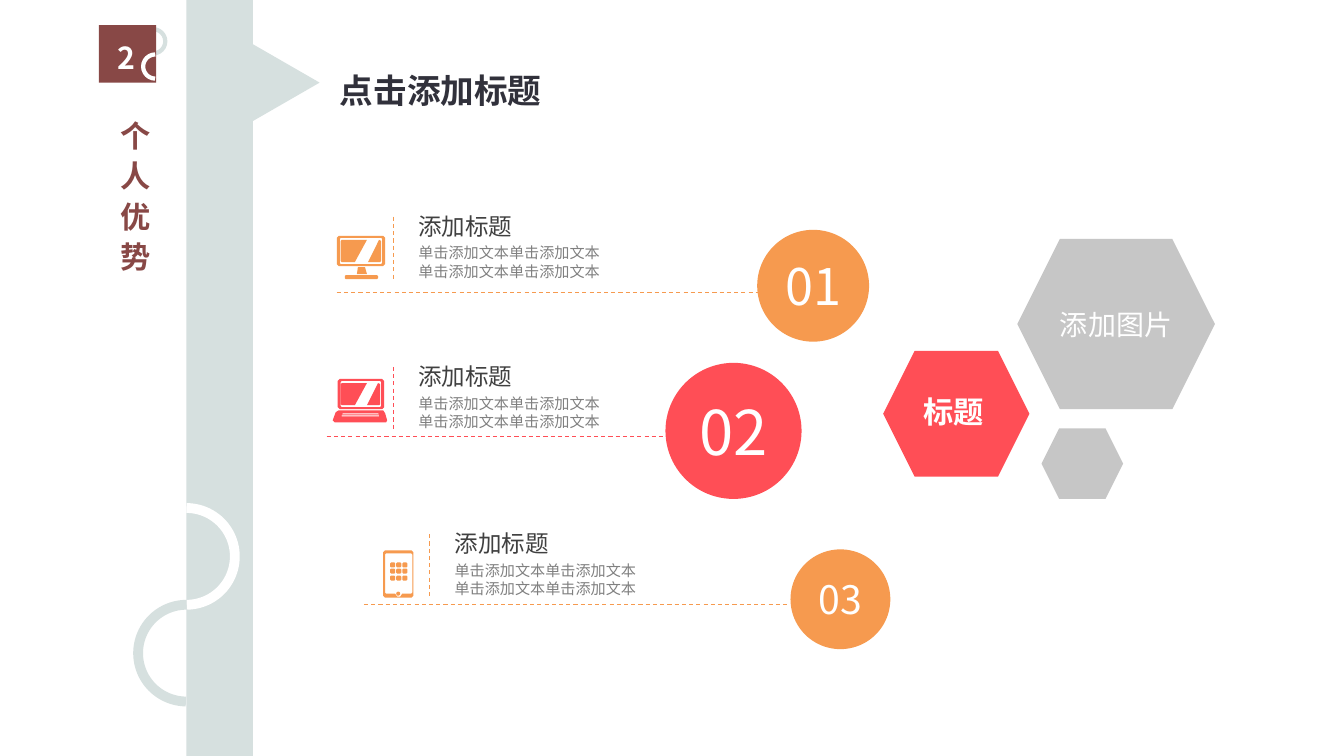
from dataclasses import dataclass

from lxml.etree import SubElement
from pptx import Presentation
from pptx.dml.color import RGBColor
from pptx.enum.dml import MSO_LINE
from pptx.enum.shapes import MSO_CONNECTOR, MSO_SHAPE as SHAPE
from pptx.enum.text import MSO_ANCHOR, MSO_AUTO_SIZE, PP_ALIGN
from pptx.oxml.ns import qn
from pptx.util import Pt

PX = 9144  # EMU in one px, a hundredth of an inch
FONT = "Noto Sans CJK JP"
ORANGE = RGBColor(0xF6, 0x9A, 0x4F)
RED = RGBColor(0xFF, 0x4E, 0x56)
WHITE = RGBColor(0xFF, 0xFF, 0xFF)
SILVER = RGBColor(0xC6, 0xC6, 0xC6)
GREY = RGBColor(0xA6, 0xA6, 0xA6)
HEADING = RGBColor(0x40, 0x40, 0x40)
BODY = RGBColor(0x80, 0x80, 0x80)
INK = RGBColor(0x31, 0x31, 0x3B)
MIST = RGBColor(0xD6, 0xE0, 0xDF)
MAROON = RGBColor(0x88, 0x48, 0x46)

Box = tuple[int, int, int, int]
Contour = list[tuple[int, int]]


@dataclass
class Entry:
    number: str
    number_size: int
    disc: Box
    color: RGBColor
    text_left: int
    text_top: int
    rule: tuple[int, int, int]  # left, right, y


@dataclass
class Arc:
    box: Box
    color: RGBColor
    weight: int
    flipped: bool = False


ENTRIES = [
    Entry("01", 36, (751, 228, 111, 111), ORANGE, 405, 205, (334, 761, 290)),
    Entry("02", 44, (660, 360, 135, 135), RED, 405, 354, (324, 660, 433)),
    Entry("03", 28, (784, 545, 99, 99), ORANGE, 441, 520, (361, 783, 600)),
]
BADGE_RING = Arc((140, 29, 24, 24), MIST, 3)
BADGE_HOOK = Arc((142, 54, 24, 24), WHITE, 3, flipped=True)
BAND_ARCS = [
    Arc((137, 504, 96, 96), WHITE, 7),
    Arc((137, 600, 96, 96), MIST, 7, flipped=True),
]

presentation = Presentation()
presentation.slide_width, presentation.slide_height = 1333 * PX, 750 * PX
slide = presentation.slides.add_slide(presentation.slide_layouts[5])
shapes = slide.shapes


def scaled(box: Box) -> list[int]:
    return [length * PX for length in box]


def paint(shape, color: RGBColor) -> None:
    shape.fill.solid()
    shape.fill.fore_color.rgb = color
    shape.line.fill.background()
    shape.shadow.inherit = False


def write(frame, text: str, size: float, color: RGBColor, bold: bool = False) -> None:
    frame.text = text
    for paragraph in frame.paragraphs:
        for run in paragraph.runs:
            run.font.name = FONT
            run.font.size = Pt(size)
            run.font.bold = bold
            run.font.color.rgb = color
            SubElement(run.font._element, qn("a:ea")).set("typeface", FONT)


def add_filled(kind: SHAPE, box: Box, color: RGBColor, text: str = "", size: float = 18):
    shape = shapes.add_shape(kind, *scaled(box))
    paint(shape, color)
    if text:
        frame = shape.text_frame
        write(frame, text, size, WHITE)
        frame.vertical_anchor = MSO_ANCHOR.MIDDLE
        frame.paragraphs[0].alignment = PP_ALIGN.CENTER
    return shape


def add_text(box: Box, text: str, size: float, color: RGBColor, bold: bool = False):
    frame = shapes.add_textbox(*scaled(box)).text_frame
    write(frame, text, size, color, bold)
    frame.word_wrap = False
    frame.auto_size = MSO_AUTO_SIZE.SHAPE_TO_FIT_TEXT
    return frame


def add_dashes(x1: int, y1: int, x2: int, y2: int, color: RGBColor) -> None:
    line = shapes.add_connector(MSO_CONNECTOR.STRAIGHT, *scaled((x1, y1, x2, y2)))
    line.line.color.rgb = color
    line.line.width = Pt(0.75)
    line.line.dash_style = MSO_LINE.DASH
    SubElement(line._element.spPr, qn("a:effectLst"))


def add_arc(arc: Arc) -> None:
    shape = shapes.add_shape(SHAPE.ARC, *scaled(arc.box))
    shape.adjustments[0], shape.adjustments[1] = 162, 53.59
    shape.fill.background()
    shape.line.color.rgb = arc.color
    shape.line.width = Pt(arc.weight)
    shape.shadow.inherit = False
    if arc.flipped:
        shape._element.spPr.find(qn("a:xfrm")).set("flipH", "1")


def add_outline(color: RGBColor, *contours: Contour) -> None:
    """Draw one freeform; later contours cut holes in the first."""
    builder = shapes.build_freeform(*contours[0][0], scale=PX)
    builder.add_line_segments(contours[0][1:])
    for contour in contours[1:]:
        builder.move_to(*contour[0])
        builder.add_line_segments(contour[1:])
    paint(builder.convert_to_shape(), color)


def soft_box(x: int, y: int, w: int, h: int, cut: int = 1) -> Contour:
    r, b = x + w, y + h
    return [(x + cut, y), (r - cut, y), (r, y + cut), (r, b - cut),
            (r - cut, b), (x + cut, b), (x, b - cut), (x, y + cut)]


def add_screen(x: int, y: int, w: int, inset: int, color: RGBColor) -> None:
    left, right, top, bottom = x + inset, x + w - 4, y + 4, y + 26
    add_outline(color, soft_box(x, y, w, 30, 2), soft_box(x + 3, y + 2, w - 6, 26))
    add_outline(color, [(left + 1, top), (left + 26, top), (left + 14, bottom),
                        (left + 1, bottom), (left, bottom - 1), (left, top + 1)])
    add_outline(color, [(right - 2, top), (right, top + 1), (right, bottom - 1),
                        (right - 1, bottom), (right - 13, bottom)])


# Heading
title = shapes.title
title.left, title.top, title.width, title.height = scaled((327, 44, 224, 65))
write(title.text_frame, "点击添加标题", 24, INK, bold=True)
title.text_frame.word_wrap = False
title.text_frame.auto_size = MSO_AUTO_SIZE.SHAPE_TO_FIT_TEXT
title.text_frame.vertical_anchor = MSO_ANCHOR.TOP
title.text_frame.paragraphs[0].alignment = PP_ALIGN.LEFT
title.text_frame.paragraphs[0].line_spacing = 1.5

# Numbered entries
for entry in ENTRIES:
    x, y = entry.text_left, entry.text_top
    left, right, rule_y = entry.rule
    add_filled(SHAPE.OVAL, entry.disc, entry.color, entry.number, entry.number_size)
    add_dashes(left, rule_y, right, rule_y, entry.color)
    add_dashes(x - 15, y + 10, x - 15, y + 73, entry.color)
    add_text((x, y, 114, 38), "添加标题", 16.8, HEADING)
    add_text((x, y + 32, 201, 46), "\n".join(["单击添加文本单击添加文本"] * 2), 10.8, BODY)

# Monitor icon
add_screen(334, 234, 48, 4, ORANGE)
add_outline(ORANGE, [(355, 265), (362, 265), (364, 272), (354, 272)])
add_outline(ORANGE, soft_box(342, 273, 33, 4))

# Laptop icon
add_screen(335, 376, 46, 3, RED)
add_outline(RED,
            [(336, 407), (380, 407), (382, 410), (384, 417), (383, 419),
             (332, 419), (330, 417), (333, 409)],
            [(340, 410), (375, 410), (376, 411), (339, 411)],
            [(339, 412), (376, 412), (376, 413), (339, 413)])

# Phone icon
add_outline(ORANGE, soft_box(380, 546, 30, 47, 2),
            [(383, 549), (408, 549), (409, 550), (409, 588), (408, 589), (399, 589),
             (397, 592), (394, 592), (392, 589), (383, 589), (382, 588), (382, 550)])
add_filled(SHAPE.OVAL, (393, 587, 4, 4), ORANGE)
for row in range(3):
    for column in range(3):
        add_outline(ORANGE, soft_box(387 + 6 * column, 558 + 13 * row // 2, 5, 5))

# Hexagons
add_filled(SHAPE.HEXAGON, (1009, 237, 196, 169), SILVER, "添加图片", 20)
add_filled(SHAPE.HEXAGON, (876, 348, 145, 125), RED)
small_hexagon = add_filled(SHAPE.HEXAGON, (1033, 425, 81, 70), GREY)
tint = small_hexagon._element.spPr.find(qn("a:solidFill"))[0]
SubElement(tint, qn("a:alpha")).set("val", "64000")
add_text((906, 385, 81, 46), "标题", 21.6, WHITE, bold=True)

# Side band and section badge
add_filled(SHAPE.RECTANGLE, (185, 0, 66, 750), MIST)
add_filled(SHAPE.ISOSCELES_TRIANGLE, (246, 49, 76, 66), MIST).rotation = 90
add_arc(BADGE_RING)
add_filled(SHAPE.RECTANGLE, (98, 25, 57, 57), MAROON)
add_arc(BADGE_HOOK)
section = add_text((99, 110, 57, 172), "个人优势", 21.6, MAROON, bold=True)
section._txBody.bodyPr.set("vert", "eaVert")
section.paragraphs[0].runs[0].font._element.set("spc", "720")
add_text((107, 34, 38, 46), "2", 21.6, WHITE, bold=True)
for arc in BAND_ARCS:
    add_arc(arc)

presentation.save("out.pptx")
